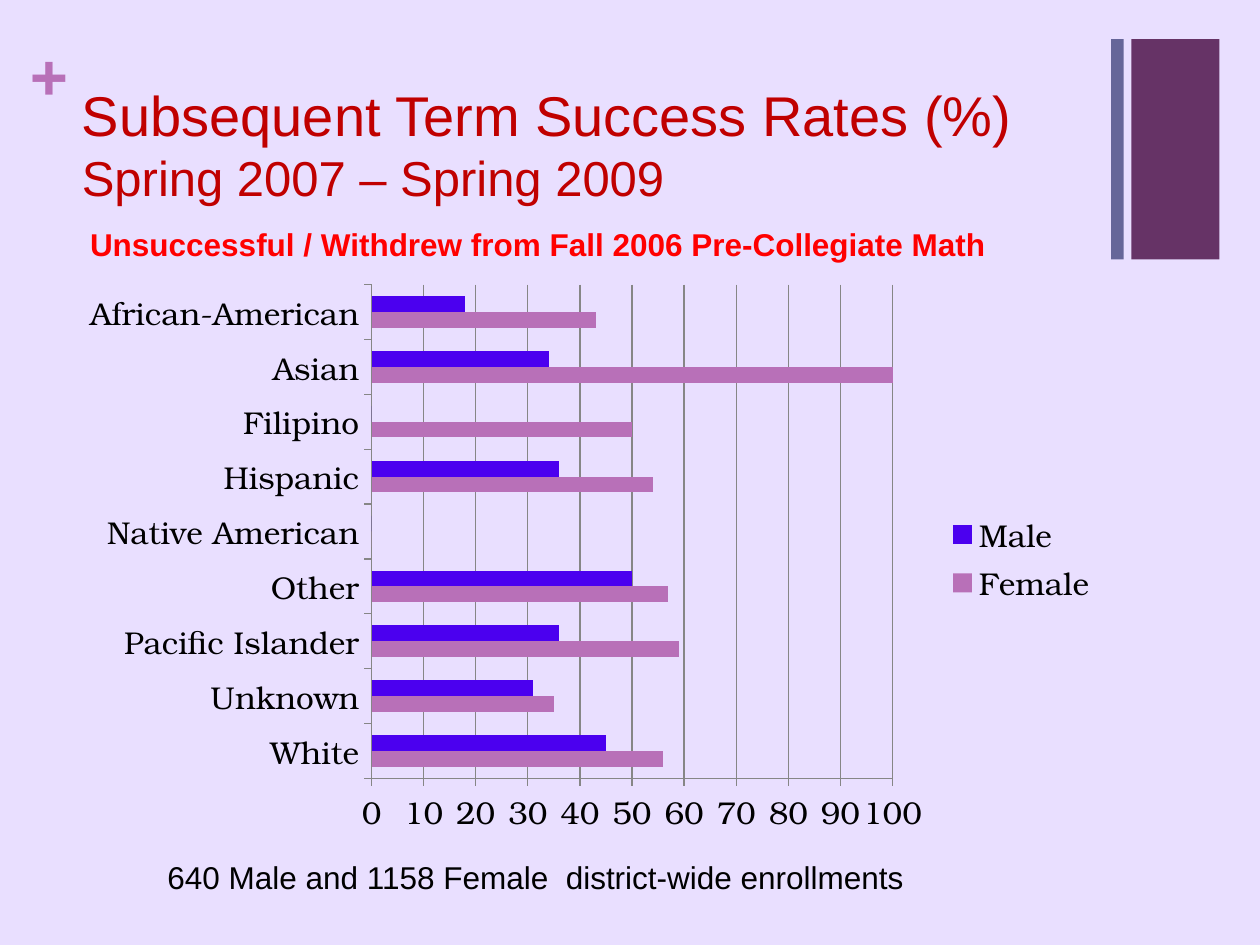
from pptx import Presentation
from pptx.chart.data import CategoryChartData
from pptx.dml.color import RGBColor
from pptx.enum.chart import XL_CHART_TYPE as ChartType, XL_LEGEND_POSITION as LegendPos, XL_TICK_MARK as Tick
from pptx.enum.shapes import MSO_SHAPE as Shape
from pptx.enum.text import MSO_ANCHOR as Anchor, PP_ALIGN as Align
from pptx.util import Pt

LAVENDER = RGBColor(0xE9, 0xDF, 0xFF)
PLUM = RGBColor(0x66, 0x33, 0x66)
SLATE = RGBColor(0x66, 0x66, 0x99)
ORCHID = RGBColor(0xB8, 0x70, 0xB8)
VIOLET = RGBColor(0x4B, 0x00, 0xEF)
DARK_RED = RGBColor(0xC0, 0x00, 0x00)
RED = RGBColor(0xFF, 0x00, 0x00)
BLACK = RGBColor(0x00, 0x00, 0x00)
GRAY = RGBColor(0x86, 0x86, 0x86)
SANS, SERIF = "Arial", "TeX Gyre Bonum"

SUCCESS_RATES = [
    ("White", 56, 45),
    ("Unknown", 35, 31),
    ("Pacific Islander", 59, 36),
    ("Other", 57, 50),
    ("Native American", 0, 0),
    ("Hispanic", 54, 36),
    ("Filipino", 50, 0),
    ("Asian", 100, 34),
    ("African-American", 43, 18),
]


def apply(target, values):
    for name, value in values.items():
        setattr(target, name, value)


class SlideBuilder:
    """Hold the style and the current slide, and add each kind of element."""

    def __init__(self, deck):
        self.slide = deck.slides.add_slide(deck.slide_layouts[5])
        fill = self.slide.background.fill
        fill.solid()
        fill.fore_color.rgb = LAVENDER

    def style_font(self, font, color, **values):
        apply(font, values)
        font.color.rgb = color

    def place(self, element, box):
        apply(element, dict(zip(("left", "top", "width", "height"), map(Pt, box))))

    def title(self, box, lines):
        heading = self.slide.shapes.title
        self.place(heading, box)
        apply(heading.text_frame, {"word_wrap": True, "vertical_anchor": Anchor.MIDDLE})
        paragraph = heading.text_frame.paragraphs[0]
        paragraph.alignment = Align.LEFT
        for index, (wording, size) in enumerate(lines):
            if index:
                paragraph.add_line_break()
            run = paragraph.add_run()
            run.text = wording
            self.style_font(run.font, DARK_RED, name=SANS, size=Pt(size))

    def bar(self, box, color):
        block = self.slide.shapes.add_shape(Shape.RECTANGLE, *map(Pt, box))
        block.shadow.inherit = False
        block.fill.solid()
        block.fill.fore_color.rgb = color
        block.line.fill.background()

    def text(self, box, wording, color, align=Align.CENTER, inset=None, **font):
        frame = self.slide.shapes.add_textbox(*map(Pt, box)).text_frame
        frame.word_wrap = True
        if inset is not None:
            sides = ("left", "top", "right", "bottom")
            apply(frame, {f"margin_{side}": Pt(inset) for side in sides})
        paragraph = frame.paragraphs[0]
        paragraph.alignment = align
        run = paragraph.add_run()
        run.text = wording
        self.style_font(run.font, color, **font)

    def bar_chart(self, box, rows, series_colors):
        categories, *columns = zip(*rows)
        data = CategoryChartData()
        data.categories = categories
        for name, values in zip(series_colors, columns):
            data.add_series(name, values)
        chart = self.slide.shapes.add_chart(ChartType.BAR_CLUSTERED, *map(Pt, box), data).chart
        apply(chart, {"has_title": False, "has_legend": True})
        apply(chart.legend, {"position": LegendPos.RIGHT, "include_in_layout": False})
        self.style_font(chart.font, BLACK, name=SERIF, size=Pt(18))
        apply(chart.plots[0], {"gap_width": 150, "overlap": 0, "vary_by_categories": False})
        for series, color in zip(chart.plots[0].series, series_colors.values()):
            series.format.fill.solid()
            series.format.fill.fore_color.rgb = color
        scale = chart.value_axis
        apply(scale, {"minimum_scale": 0, "maximum_scale": 100, "major_unit": 10,
                      "has_major_gridlines": True})
        for axis in (scale, chart.category_axis):
            axis.major_tick_mark = Tick.OUTSIDE
            axis.format.line.color.rgb = GRAY
        scale.major_gridlines.format.line.color.rgb = GRAY


def main():
    deck = Presentation()
    apply(deck, {"slide_width": Pt(720), "slide_height": Pt(540)})
    builder = SlideBuilder(deck)
    builder.bar((646.5, 22.3, 50.4, 126), PLUM)
    builder.text((17.3, 18, 20.9, 43.9), "+", ORCHID, align=Align.LEFT, inset=0,
                 name=SERIF, size=Pt(36), bold=True)
    builder.bar((635, 22.3, 7.2, 126), SLATE)
    builder.title((39.6, 38.2, 594.7, 87.8),
                  [("Subsequent Term Success Rates (%)", 32), ("Spring 2007 – Spring 2009", 28)])
    builder.bar_chart((39.6, 156.2, 594.7, 326.2), SUCCESS_RATES,
                      {"Female": ORCHID, "Male": VIOLET})
    builder.text((0, 125.3, 614.9, 28.8),
                 "Unsuccessful / Withdrew from Fall 2006 Pre-Collegiate Math", RED,
                 name=SANS, size=Pt(18), bold=True)
    builder.text((-1.4, 486.7, 614.9, 28.8),
                 "640 Male and 1158 Female  district-wide enrollments", BLACK,
                 name=SANS, size=Pt(18))
    deck.save("out.pptx")


if __name__ == "__main__":
    main()
